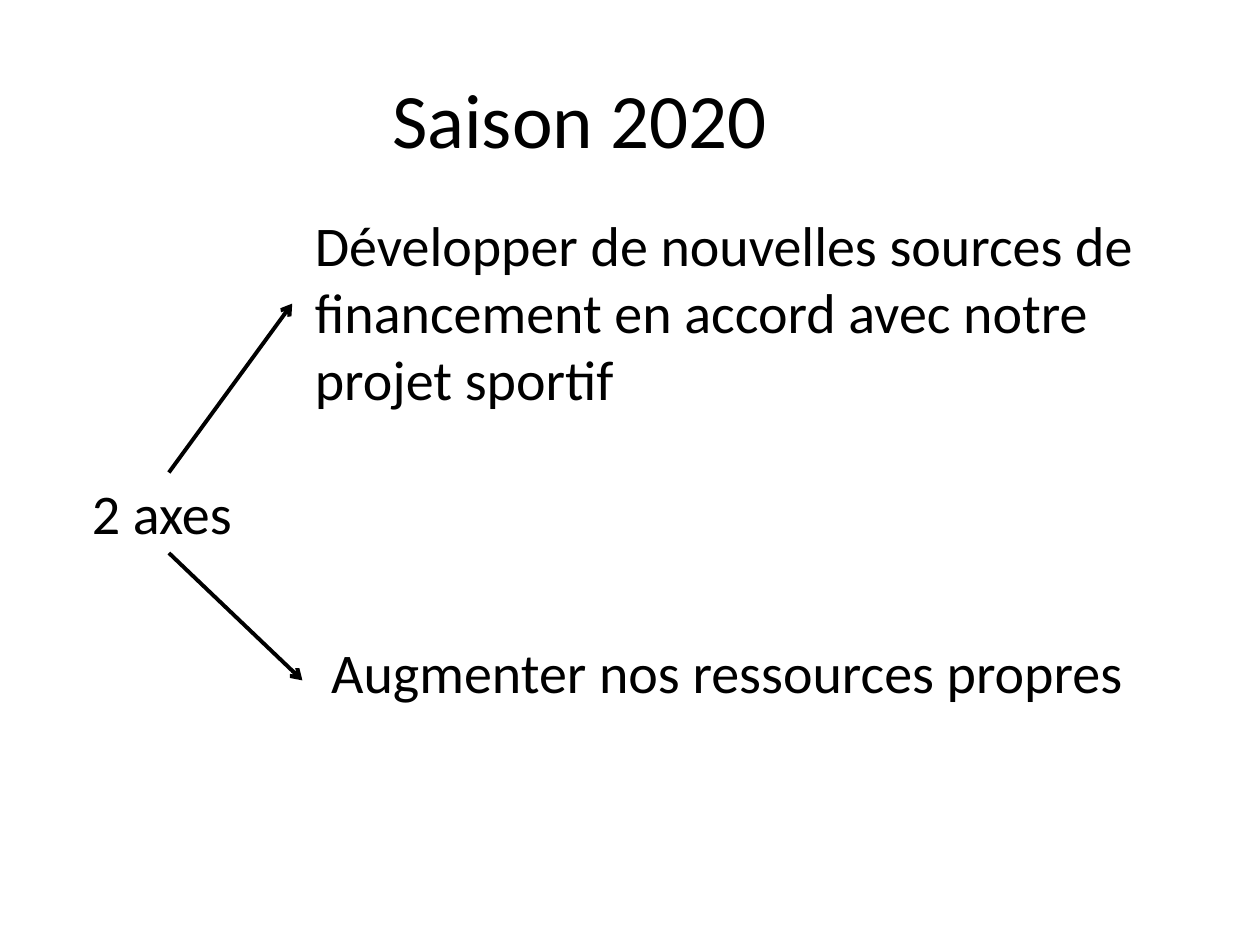
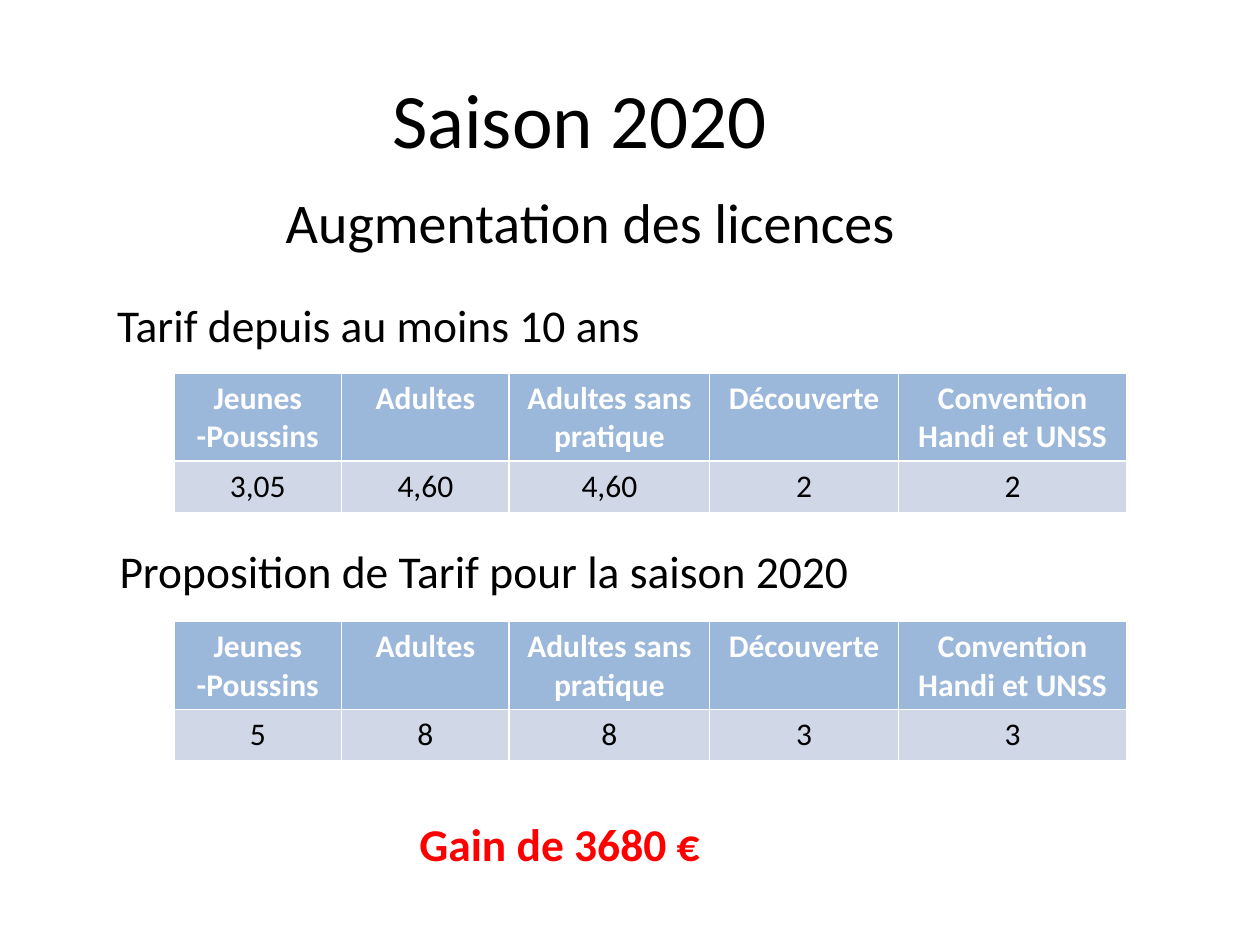
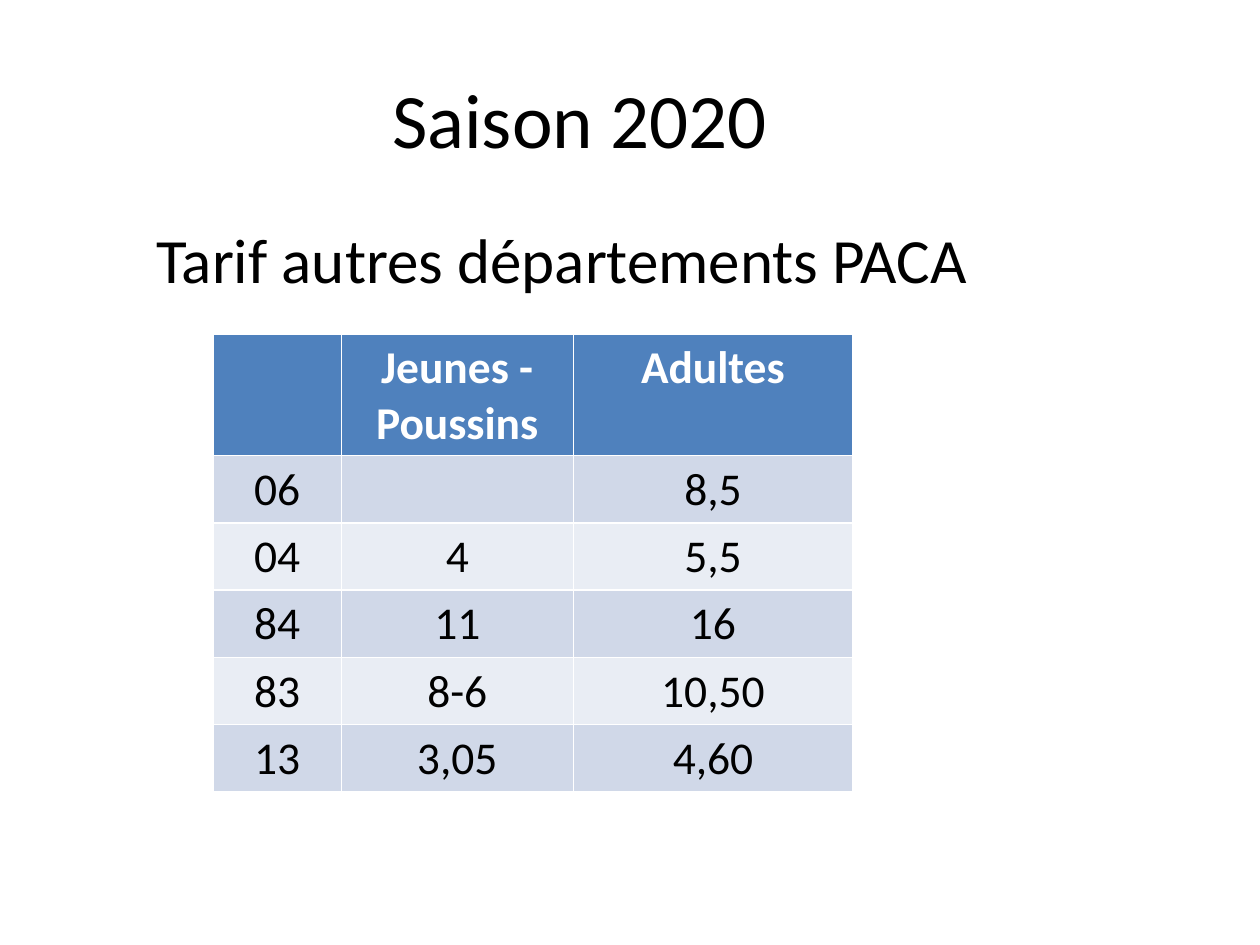
from lxml.etree import SubElement
from pptx import Presentation
from pptx.dml.color import RGBColor
from pptx.enum.shapes import MSO_CONNECTOR
from pptx.enum.text import PP_ALIGN
from pptx.oxml.ns import qn
from pptx.util import Pt

FONT = "Calibri"
BLACK = RGBColor(0x00, 0x00, 0x00)
WHITE = RGBColor(0xFF, 0xFF, 0xFF)
RED = RGBColor(0xFF, 0x00, 0x00)
BLUE = RGBColor(0x4F, 0x81, 0xBD)
SOFT_BLUE = RGBColor(0x9B, 0xB7, 0xD9)
BANDS = [RGBColor(0xD0, 0xD8, 0xE8), RGBColor(0xE9, 0xED, 0xF4)]


def add_text(slide, text, left, top, width, height, size,
             color=BLACK, bold=False, align=PP_ALIGN.LEFT):
    box = slide.shapes.add_textbox(Pt(left), Pt(top), Pt(width), Pt(height))
    box.text_frame.word_wrap = True
    paragraph = box.text_frame.paragraphs[0]
    paragraph.alignment = align
    run = paragraph.add_run()
    run.text = text
    run.font.name = FONT
    run.font.size = Pt(size)
    run.font.bold = bold
    run.font.color.rgb = color
    return box


def add_rates(slide, rows, left, top, widths, head_height, row_height, size, head_fill):
    heights = [head_height] + [row_height] * (len(rows) - 1)
    table = slide.shapes.add_table(len(rows), len(widths), Pt(left), Pt(top),
                                   Pt(sum(widths)), Pt(sum(heights))).table
    for column, width in zip(table.columns, widths):
        column.width = Pt(width)
    for r, values in enumerate(rows):
        table.rows[r].height = Pt(heights[r])
        for c, value in enumerate(values):
            cell = table.cell(r, c)
            cell.fill.solid()
            cell.fill.fore_color.rgb = BANDS[(r - 1) % 2] if r else head_fill
            if not value:
                continue
            paragraph = cell.text_frame.paragraphs[0]
            paragraph.alignment = PP_ALIGN.CENTER
            run = paragraph.add_run()
            run.text = value
            run.font.name = FONT
            run.font.size = Pt(size)
            run.font.bold = r == 0
            run.font.color.rgb = BLACK if r else WHITE


prs = Presentation()
prs.slide_width, prs.slide_height = Pt(720), Pt(540)

# Shared title on every slide
slides = [prs.slides.add_slide(prs.slide_layouts[6]) for _ in range(3)]
for slide in slides:
    add_text(slide, "Saison 2020", 25.2, 37.4, 612, 51, 44, align=PP_ALIGN.CENTER)
axes_slide, licences_slide, departments_slide = slides

# Slide 1: the two axes
axes = add_text(axes_slide, "2 axes", 45.4, 270, 102.2, 46, 32)
add_text(axes_slide, "Augmenter nos ressources propres", 182.2, 360.7, 521.3, 46, 32)
add_text(axes_slide,
         "Développer de nouvelles sources de financement en accord avec notre projet sportif",
         172.8, 116.6, 527, 123.8, 32)
for side, end_x, end_y in [(0, 167, 173.5), (2, 172.8, 388.8)]:
    arrow = axes_slide.shapes.add_connector(
        MSO_CONNECTOR.STRAIGHT, Pt(96.5), Pt(270), Pt(end_x), Pt(end_y))
    arrow.begin_connect(axes, side)
    arrow.line.color.rgb = BLACK
    arrow.line.width = Pt(2.25)
    SubElement(arrow.line._get_or_add_ln(), qn("a:tailEnd"), type="arrow")
    SubElement(arrow._element.spPr, qn("a:effectLst"))

# Slide 2: licence rates, current and proposed
add_text(licences_slide, "Augmentation des licences", 156.2, 103.7, 447.8, 46, 32)
categories = ["Jeunes -Poussins", "Adultes", "Adultes sans pratique",
              "Découverte", "Convention Handi et UNSS"]
rate_blocks = [
    ("Tarif depuis au moins 10 ans", 59.8, 166.3, 213.1,
     ["3,05", "4,60", "4,60", "2", "2"]),
    ("Proposition de Tarif pour la saison 2020", 61.2, 306.7, 355,
     ["5", "8", "8", "3", "3"]),
]
for heading, left, top, table_top, rates in rate_blocks:
    add_text(licences_slide, heading, left, top, 459, 39, 26)
    add_rates(licences_slide, [categories, rates], 99.4, table_top,
              [95.8, 95.8, 114.5, 108, 130.3], 50.4, 29.5, 18, SOFT_BLUE)
add_text(licences_slide, "Gain de 3680 €", 232.6, 463, 255, 39, 26, RED, True)

# Slide 3: rates in the other departments
add_text(departments_slide, "Tarif autres départements PACA", 82.1, 122.4, 572.4, 51, 36)
department_rates = [
    ["", "Jeunes - Poussins", "Adultes"],
    ["06", "", "8,5"],
    ["04", "4", "5,5"],
    ["84", "11", "16"],
    ["83", "8-6", "10,50"],
    ["13", "3,05", "4,60"],
]
add_rates(departments_slide, department_rates, 121.7, 190.8,
          [73.4, 132.5, 159.8], 69.4, 38.4, 26, BLUE)

prs.save("out.pptx")
